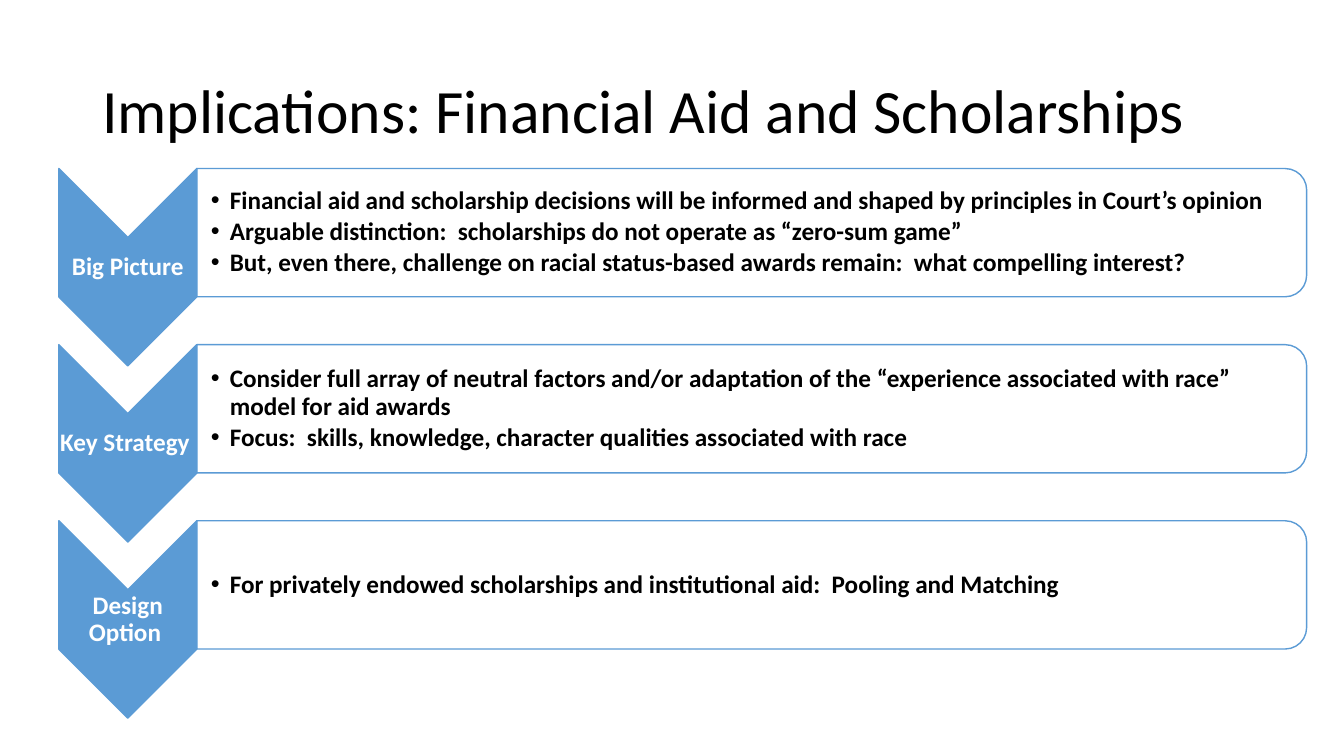
import pptx
import pptx.dml.color
import pptx.enum.shapes
import pptx.enum.text
import pptx.util
from lxml import etree

Pt = pptx.util.Pt
KIND = pptx.enum.shapes.MSO_SHAPE
ALIGN = pptx.enum.text.PP_ALIGN
MIDDLE = pptx.enum.text.MSO_ANCHOR.MIDDLE

BLUE, WHITE, BLACK = "5B9BD5", "FFFFFF", "000000"
TITLE = "Implications: Financial Aid and Scholarships"
ROWS = [
    ("Big Picture", [
        "Financial aid and scholarship decisions will be informed and shaped by principles in Court’s opinion",
        "Arguable distinction:  scholarships do not operate as “zero-sum game”",
        "But, even there, challenge on racial status-based awards remain:  what compelling interest?",
    ]),
    ("Key Strategy ", [
        "Consider full array of neutral factors and/or adaptation of the “experience associated with race” model for aid awards",
        "Focus:  skills, knowledge, character qualities associated with race",
    ]),
    ("Design Option ", [
        "For privately endowed scholarships and institutional aid:  Pooling and Matching",
    ]),
]


def color(code):
    return pptx.dml.color.RGBColor.from_string(code)


def assign(item, values):
    for name, value in values.items():
        setattr(item, name, value)


def child(node, tag, **attrs):
    return etree.SubElement(node, pptx.oxml.ns.qn(tag), attrs)


def write(slide, box, lines, font, code, inset, para, bullet=False):
    """Add a text box with one paragraph per line."""
    frame = slide.shapes.add_textbox(*map(Pt, box)).text_frame
    sides = ("margin_left", "margin_top", "margin_right", "margin_bottom")
    assign(frame, {"word_wrap": True, "vertical_anchor": MIDDLE,
                   **dict(zip(sides, map(Pt, inset)))})
    for i, line in enumerate(lines):
        par = frame.add_paragraph() if i else frame.paragraphs[0]
        assign(par, {"line_spacing": 0.9, **para})
        run = par.add_run()
        run.text = line
        assign(run.font, {"name": "Calibri", **font})
        run.font.color.rgb = color(code)
        if bullet:
            props = par._p.get_or_add_pPr()
            props.set("marL", str(Pt(13.5)))
            props.set("indent", str(-Pt(13.5)))
            child(props, "a:buFont", typeface="Arial")
            child(props, "a:buChar", char="•")


def turned(slide, kind, box, code):
    """Add a shape turned a quarter clockwise so that it covers the box."""
    x, y, w, h = box
    shift = (w - h) / 2
    shape = slide.shapes.add_shape(kind, *map(Pt, (x + shift, y - shift, h, w)))
    shape.rotation = 90
    shape.shadow.inherit = False
    shape.fill.solid()
    shape.fill.fore_color.rgb = color(code)
    shape.line.color.rgb = color(BLUE)
    shape.line.width = Pt(1)
    return shape


def title(slide, box):
    write(slide, box, [TITLE], {"size": Pt(44)}, BLACK,
          (7.2, 3.6, 7.2, 3.6), {})


def row(slide, box, label, points):
    x, y, w, h = box
    arrow = 98.6
    font = {"size": Pt(18), "bold": True}

    # Chevron with its label
    turned(slide, KIND.CHEVRON, (x, y, arrow, h), BLUE)
    write(slide, (x, y + arrow / 2, arrow, h - arrow), [label], font, WHITE,
          (0.9,) * 4, {"alignment": ALIGN.CENTER})

    # Panel with its bullets
    panel = (x + arrow, y, w - arrow, 91.6)
    shape = turned(slide, KIND.ROUND_2_SAME_RECTANGLE, panel, WHITE)
    tint = shape.fill._xPr.find(".//" + pptx.oxml.ns.qn("a:srgbClr"))
    child(tint, "a:alpha", val="90000")
    left, top, wide, high = panel
    write(slide, (left, top + 4.4, wide - 4.5, high - 8.8), points, font, BLACK,
          (10.1, 0.9, 0.9, 0.9), {"space_after": Pt(2.7)}, bullet=True)


def main():
    deck = pptx.Presentation()
    assign(deck, {"slide_width": Pt(960), "slide_height": Pt(540)})
    slide = deck.slides.add_slide(deck.slide_layouts[6])
    title(slide, (66, 28.8, 828, 104.4))
    for i, (label, points) in enumerate(ROWS):
        row(slide, (42, 120.4 + 125.8 * i, 891.3, 141), label, points)
    deck.save("out.pptx")


if __name__ == "__main__":
    main()
